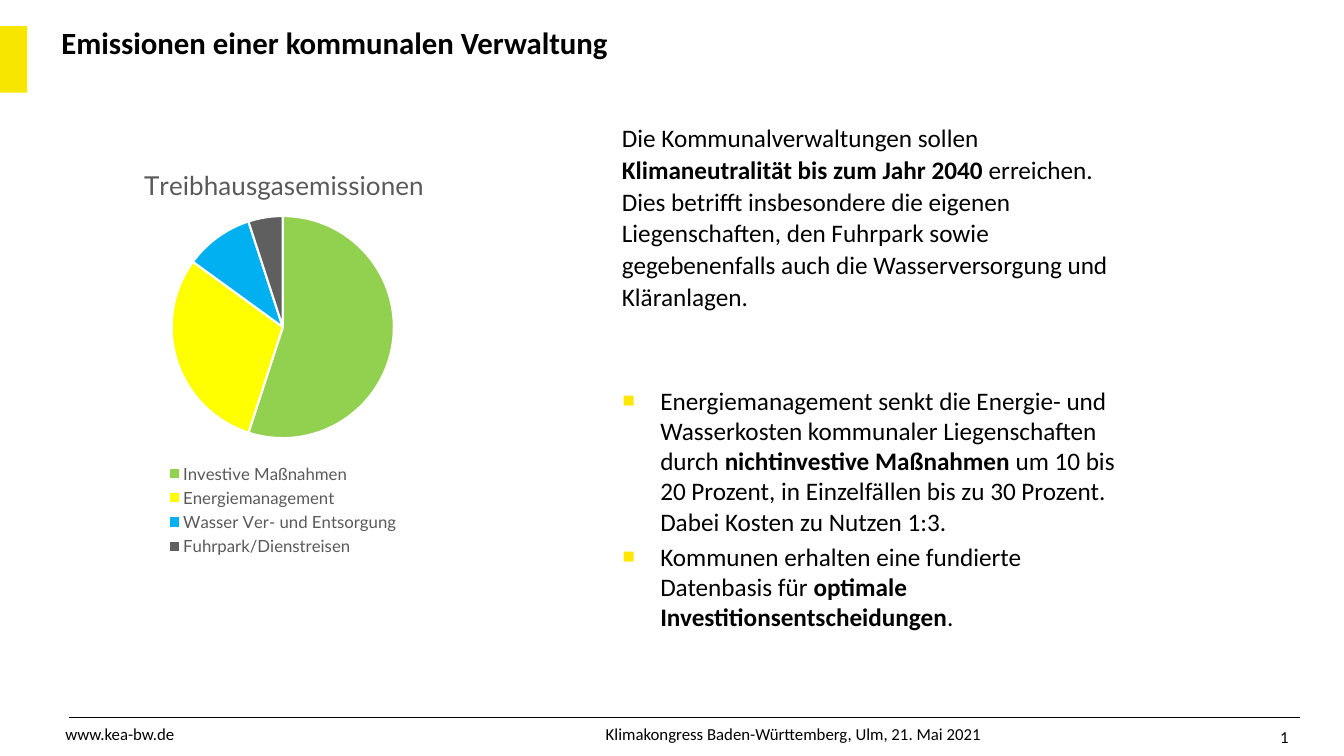
from dataclasses import dataclass

from lxml import etree
from pptx import Presentation
from pptx.chart import data as chart_data
from pptx.dml import color
from pptx.enum import chart as charts, shapes, text
from pptx.oxml import ns
from pptx import util as u


@dataclass(frozen=True)
class Theme:
    font: str = "Calibri"
    chart_font: str = "Lato"
    ink: str = "000000"
    paper: str = "FFFFFF"
    muted: str = "595959"
    accent: str = "F6E600"
    bullet: str = "FFE703"
    slices: tuple = ("92D050", "FFFF00", "00B0F0", "5F5F5F")
    title: float = 22
    body: float = 18
    footer: float = 12
    chart_base: float = 10
    chart_title: float = 18.6
    legend: float = 12


def rgb(value):
    return color.RGBColor.from_string(value)


def assign(target, **values):
    for name, value in values.items():
        setattr(target, name, value)


def add_element(parent, tag, **attributes):
    return etree.SubElement(parent, ns.qn(tag), attributes)


class SlideBuilder:
    def __init__(self, page, theme):
        self.page = page
        self.theme = theme

    def style_font(self, font, size, name=None, ink=None, bold=False):
        assign(font, name=name or self.theme.font, size=u.Pt(size), bold=bold)
        font.color.rgb = rgb(ink or self.theme.ink)

    def bar(self, *place):
        shape = self.page.shapes.add_shape(
            shapes.MSO_SHAPE.RECTANGLE, *map(u.Inches, place))
        shape.shadow.inherit = False
        shape.fill.solid()
        shape.fill.fore_color.rgb = rgb(self.theme.accent)
        shape.line.fill.background()

    def rule(self, *ends):
        line = self.page.shapes.add_connector(
            shapes.MSO_CONNECTOR.STRAIGHT, *map(u.Inches, ends))
        line.line.color.rgb = rgb(self.theme.ink)
        line.line.width = u.Pt(0.75)
        add_element(line._element.spPr, "a:effectLst")

    def bullet(self, para):
        properties = para._p.get_or_add_pPr()
        indent = u.Inches(0.38)
        properties.set("marL", str(indent))
        properties.set("indent", str(-indent))
        tint = add_element(properties, "a:buClr")
        add_element(tint, "a:srgbClr", val=self.theme.bullet)
        add_element(properties, "a:buSzPct", val="155000")
        add_element(properties, "a:buFont", typeface=self.theme.font)
        add_element(properties, "a:buChar", char="▪")

    def text(self, place, paragraphs, size, bullets=False, gap=0,
             anchor=text.MSO_ANCHOR.TOP, fit=text.MSO_AUTO_SIZE.NONE, **layout):
        box = self.page.shapes.add_textbox(*map(u.Inches, place))
        frame = box.text_frame
        assign(frame, word_wrap=True, vertical_anchor=anchor, auto_size=fit)
        for index, spans in enumerate(paragraphs):
            para = frame.add_paragraph() if index else frame.paragraphs[0]
            if bullets:
                self.bullet(para)
            if index:
                para.space_before = u.Pt(gap)
            assign(para, **layout)
            for words, bold in spans:
                span = para.add_run()
                span.text = words
                self.style_font(span.font, size, bold=bold)

    def footer(self, place, words, **layout):
        self.text(place, [[(words, False)]], self.theme.footer,
                  anchor=text.MSO_ANCHOR.MIDDLE, **layout)

    def chart_layout(self, owner, **values):
        for old in owner.findall(ns.qn("c:layout")):
            owner.remove(old)
        layout = etree.Element(ns.qn("c:layout"))
        manual = add_element(layout, "c:manualLayout")
        for name, value in values.items():
            add_element(manual, f"c:{name}", val=str(value))
        return layout

    def pie(self, place, heading, shares):
        theme = self.theme
        source = chart_data.CategoryChartData()
        source.categories = list(shares)
        source.add_series("Series 1", list(shares.values()))
        chart = self.page.shapes.add_chart(
            charts.XL_CHART_TYPE.PIE, *map(u.Inches, place), source).chart
        self.style_font(chart.font, theme.chart_base, theme.chart_font)

        chart.has_title = True
        para = chart.chart_title.text_frame.paragraphs[0]
        span = para.add_run()
        span.text = heading
        self.style_font(span.font, theme.chart_title, theme.chart_font, theme.muted)
        title = chart.chart_title._element
        layout = self.chart_layout(title, xMode="edge", yMode="edge", x=0.19, y=0.05)
        title.find(ns.qn("c:tx")).addnext(layout)

        chart.has_legend = True
        assign(chart.legend, position=charts.XL_LEGEND_POSITION.BOTTOM,
               include_in_layout=False)
        self.style_font(chart.legend.font, theme.legend, theme.chart_font, theme.muted)
        legend = chart.legend._element
        layout = self.chart_layout(legend, xMode="edge", yMode="edge",
                                   x=0.24, y=0.76, w=0.52, h=0.24)
        legend.find(ns.qn("c:legendPos")).addnext(layout)

        plot = chart.plots[0]
        plot.vary_by_categories = True
        area = plot._element.getparent()
        layout = self.chart_layout(area, layoutTarget="inner", xMode="edge",
                                   yMode="edge", x=0.26, y=0.18, w=0.48, h=0.53)
        area.insert(0, layout)
        for index, tint in enumerate(theme.slices):
            piece = plot.series[0].points[index].format
            piece.fill.solid()
            piece.fill.fore_color.rgb = rgb(tint)
            piece.line.color.rgb = rgb(theme.paper)
            piece.line.width = u.Pt(1.5)


def main():
    deck = Presentation()
    assign(deck, slide_width=u.Inches(13.33), slide_height=u.Inches(7.5))
    theme = Theme()
    builder = SlideBuilder(deck.slides.add_slide(deck.slide_layouts[6]), theme)

    builder.bar(0, 0.26, 0.27, 0.66)
    builder.rule(12.89, 7.12, 0.68, 7.12)
    builder.footer((0.55, 7.12, 4.22, 0.33), "www.kea-bw.de")
    builder.footer((5.91, 7.12, 5.17, 0.33),
                   "Klimakongress Baden-Württemberg, Ulm, 21. Mai 2021")
    builder.text((0.51, 0.21, 7, 0.94),
                 [[("Emissionen einer kommunalen Verwaltung", True)]],
                 theme.title, line_spacing=0.95)
    builder.pie((0.51, 1.39, 4.59, 4.17), "Treibhausgasemissionen", {
        "Investive Maßnahmen": 55,
        "Energiemanagement": 30,
        "Wasser Ver- und Entsorgung": 10,
        "Fuhrpark/Dienstreisen": 5,
    })
    builder.footer((12.12, 7.14, 0.76, 0.33), "1", alignment=text.PP_ALIGN.RIGHT)
    builder.text((6.07, 3.77, 5.25, 3.14), [
        [("Energiemanagement senkt die Energie- und Wasserkosten kommunaler "
          "Liegenschaften durch ", False),
         ("nichtinvestive Maßnahmen", True),
         (" um 10 bis 20 Prozent, in Einzelfällen bis zu 30 Prozent. "
          "Dabei Kosten zu Nutzen 1:3.", False)],
        [("Kommunen erhalten eine fundierte Datenbasis für ", False),
         ("optimale Investitionsentscheidungen", True),
         (".", False)],
    ], theme.body, bullets=True, gap=3.6)
    builder.text((6.07, 1.15, 5.33, 2), [
        [("Die Kommunalverwaltungen sollen ", False),
         ("Klimaneutralität bis zum Jahr 2040 ", True),
         ("erreichen. Dies betrifft insbesondere die eigenen Liegenschaften, "
          "den Fuhrpark sowie gegebenenfalls auch die Wasserversorgung und "
          "Kläranlagen.", False)],
    ], theme.body, fit=text.MSO_AUTO_SIZE.SHAPE_TO_FIT_TEXT, line_spacing=1.05)
    deck.save("out.pptx")


if __name__ == "__main__":
    main()
